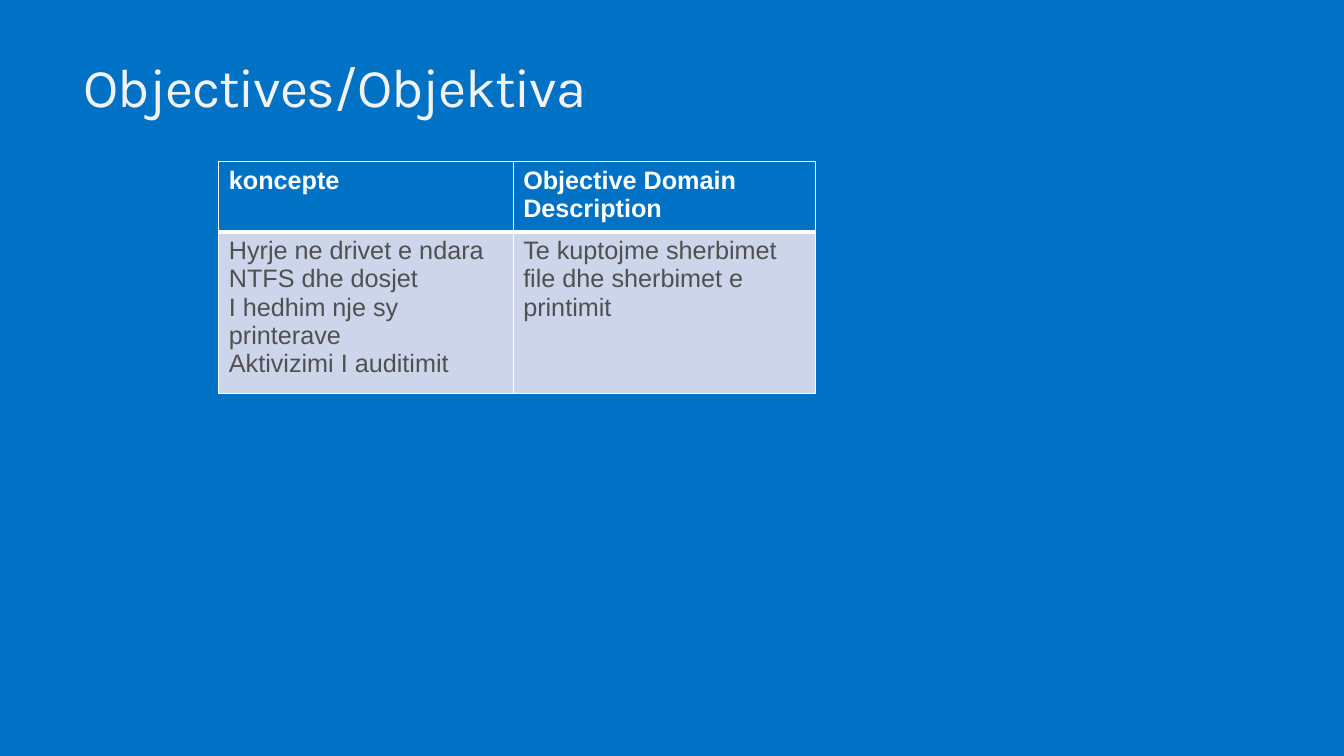
from dataclasses import dataclass

from lxml.etree import SubElement
from pptx import Presentation
from pptx.dml.color import RGBColor
from pptx.enum.text import MSO_ANCHOR
from pptx.oxml.ns import qn
from pptx.util import Pt

SCALE = 9144


@dataclass(frozen=True)
class Theme:
    """Colours, fonts and type sizes of the slide."""
    blue: str = "0072C6"
    pale: str = "CCD5EA"
    white: str = "FFFFFF"
    light: str = "F2F2F2"
    grey: str = "505050"
    head: str = "Karla"
    body: str = "Arial"
    big: int = 39
    small: int = 18
    thin: int = 1
    thick: int = 3


THEME = Theme()
ROWS = [
    ["koncepte", "Objective Domain Description"],
    ["Hyrje ne drivet e ndara NTFS dhe dosjet\n"
     "I hedhim nje sy printerave\n"
     "Aktivizimi I auditimit",
     "Te kuptojme sherbimet file dhe sherbimet e printimit"],
]


def px(size):
    """Turn px into EMU."""
    return size * SCALE


def style(frame, face, size, tone, bold=False):
    """Format every run of a text frame."""
    for para in frame.paragraphs:
        for run in para.runs:
            font = run.font
            font.name, font.size, font.bold = face, Pt(size), bold
            font.color.rgb = RGBColor.from_string(tone)


def inset(item, side, top):
    """Set equal margins on opposite sides of a cell or frame."""
    item.margin_left = item.margin_right = px(side)
    item.margin_top = item.margin_bottom = px(top)


def edge(cell, side, width):
    """Draw one white border of a cell."""
    props = cell._tc.get_or_add_tcPr()
    line = SubElement(props, qn(f"a:ln{side}"), w=str(Pt(width)))
    fill = SubElement(line, qn("a:solidFill"))
    SubElement(fill, qn("a:srgbClr"), val=THEME.white)


def add_title(slide, box, text):
    """Place the slide title in its box."""
    frame = slide.shapes.add_textbox(*map(px, box)).text_frame
    frame.word_wrap = True
    frame.vertical_anchor = MSO_ANCHOR.TOP
    inset(frame, 16, 10)
    frame.text = text
    para = frame.paragraphs[0]
    para.line_spacing = 0.9
    style(frame, THEME.head, THEME.big, THEME.light)
    para.runs[0].font._element.set("spc", "-80")


def fill_cell(cell, text, first):
    """Write and colour a header or body cell."""
    inset(cell, 10, 5)
    cell.text = text
    tone = THEME.white if first else THEME.grey
    style(cell.text_frame, THEME.body, THEME.small, tone, first)
    rule = "B" if first else "T"
    for side in "LRTB":
        edge(cell, side, THEME.thick if side == rule else THEME.thin)
    cell.fill.solid()
    back = THEME.blue if first else THEME.pale
    cell.fill.fore_color.rgb = RGBColor.from_string(back)


def add_goals(slide, box, wide, tall):
    """Place the table of objectives in its box."""
    shape = slide.shapes.add_table(len(ROWS), len(wide), *map(px, box))
    table = shape.table
    for col, width in zip(table.columns, wide):
        col.width = px(width)
    for row, height in zip(table.rows, tall):
        row.height = px(height)
    for i, texts in enumerate(ROWS):
        for j, text in enumerate(texts):
            fill_cell(table.cell(i, j), text, i == 0)


def main():
    """Build and save the slide."""
    deck = Presentation()
    deck.slide_width, deck.slide_height = px(1333), px(750)
    slide = deck.slides.add_slide(deck.slide_layouts[6])
    back = slide.background.fill
    back.solid()
    back.fore_color.rgb = RGBColor.from_string(THEME.blue)
    add_title(slide, (67, 50, 1200, 100), "Objectives/Objektiva")
    add_goals(slide, (217, 160, 592, 230), (292, 300), (70, 160))
    deck.save("out.pptx")


if __name__ == "__main__":
    main()
